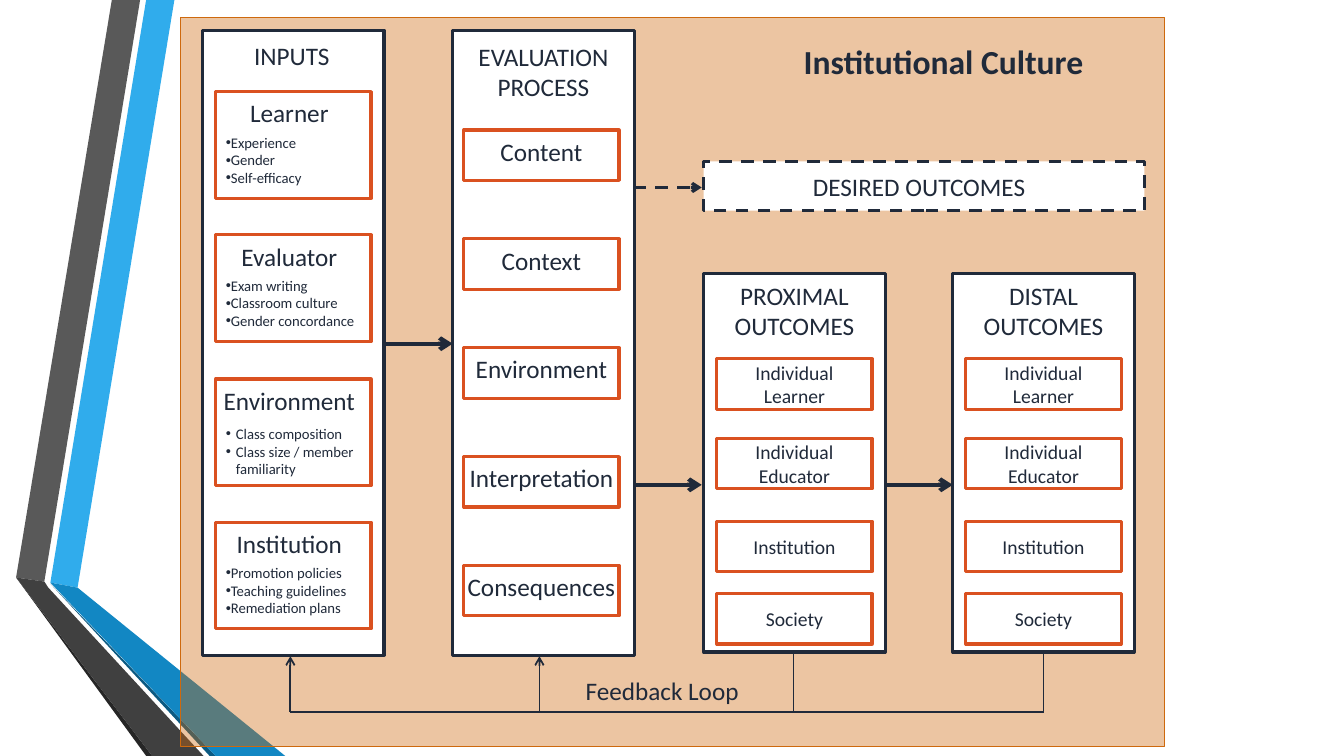
"""Builds the institutional culture slide: inputs, evaluation process and outcomes."""
from lxml import etree
from pptx import Presentation
from pptx.dml.color import RGBColor
from pptx.enum.dml import MSO_LINE
from pptx.enum.shapes import MSO_CONNECTOR, MSO_SHAPE
from pptx.enum.text import MSO_ANCHOR, PP_ALIGN
from pptx.oxml.ns import qn
from pptx.util import Pt

RECTANGLE = MSO_SHAPE.RECTANGLE
STRAIGHT = MSO_CONNECTOR.STRAIGHT
DASH = MSO_LINE.DASH
TOP, MIDDLE = MSO_ANCHOR.TOP, MSO_ANCHOR.MIDDLE
LEFT, CENTER = PP_ALIGN.LEFT, PP_ALIGN.CENTER

PX = 9144
FONT = "Calibri"
TITLE_ONLY = 5
CARD_WIDTH = 154
COLORS = {
    "white": "FFFFFF", "navy": "202A3A", "card": "DA5120", "culture": "CE690D",
    "blue": "30ACEC", "gray": "595959", "black": "262626", "deep": "0C5A82",
    "ocean": "1287C3", "charcoal": "404040",
}
RIBBONS = [
    ("blue", [(50, 578), (77, 583), (173, 0), (145, 0)]),
    ("gray", [(139, 0), (111, 0), (16, 573), (44, 577)]),
    ("black", [(16, 573), (145, 750), (151, 750)]),
    ("deep", [(50, 579), (208, 750), (214, 750)]),
    ("ocean", [(50, 578), (214, 750), (283, 750), (77, 583)]),
    ("charcoal", [(16, 573), (151, 750), (202, 750), (48, 583), (44, 577)]),
]
INPUTS = [
    ("Learner", ["Experience", "Gender", "Self-efficacy"], False),
    ("Evaluator", ["Exam writing", "Classroom culture", "Gender concordance"], False),
    ("Environment", ["Class composition", "Class size / member familiarity"], True),
    ("Institution", ["Promotion policies", "Teaching guidelines", "Remediation plans"], False),
]
PROCESS = ["Content", "Context", "Environment", "Interpretation", "Consequences"]
OUTCOMES = [("Individual Learner", 85), ("Individual Educator", 164),
            ("Institution", 246), ("Society", 318)]
ARROWS = [
    ((381, 341), (449, 341), 3, True, False),
    ((628, 481), (696, 481), 3, True, False),
    ((878, 481), (945, 481), 3, True, False),
    ((628, 186), (696, 186), 2.25, True, True),
]
FEEDBACK = [
    ((1035, 647), (1035, 706), 1.25, False, False),
    ((1035, 706), (288, 706), 1.25, False, False),
    ((288, 706), (288, 651), 1.25, True, False),
    ((535, 706), (535, 651), 1.25, True, False),
    ((787, 647), (787, 706), 1.25, False, False),
]


def rgb(name):
    """Return a palette colour."""
    return RGBColor.from_string(COLORS[name])


def scaled(*lengths):
    """Turn px lengths into EMU."""
    return [length * PX for length in lengths]


def set_frame(shape, margins=(0, 0, 0, 0), anchor=TOP, wrap=True):
    """Set margins, anchor and wrapping, and return the text frame."""
    frame = shape.text_frame
    frame.margin_left, frame.margin_top, frame.margin_right, frame.margin_bottom = scaled(*margins)
    frame.vertical_anchor = anchor
    frame.word_wrap = wrap
    return frame


def write(paragraph, text, size, alignment=CENTER, bold=False):
    """Add one formatted run to a paragraph."""
    paragraph.alignment = alignment
    run = paragraph.add_run()
    run.text = text
    run.font.name, run.font.size, run.font.bold = FONT, Pt(size), bold
    run.font.color.rgb = rgb("navy")


def add_box(slide, box, line="navy", width=2.25, fill="white"):
    """Add a filled and outlined rectangle."""
    shape = slide.shapes.add_shape(RECTANGLE, *scaled(*box))
    shape.shadow.inherit = False
    shape.fill.solid()
    shape.fill.fore_color.rgb = rgb(fill)
    shape.line.color.rgb = rgb(line)
    shape.line.width = Pt(width)
    return shape


def add_column(slide, box, lines, margins):
    """Add a white column with its heading lines at the top."""
    frame = set_frame(add_box(slide, box), margins)
    for index, line in enumerate(lines):
        write(frame.add_paragraph() if index else frame.paragraphs[0], line, 18)


def add_line(slide, start, end, width, arrow, dashed):
    """Add a straight connector, with an arrowhead and dashes where asked."""
    connector = slide.shapes.add_connector(STRAIGHT, *scaled(*start, *end))
    connector.line.color.rgb = rgb("navy")
    connector.line.width = Pt(width)
    if dashed:
        connector.line.dash_style = DASH
    if arrow:
        etree.SubElement(connector.line._get_or_add_ln(), qn("a:tailEnd"), type="arrow")
    etree.SubElement(connector.element.spPr, qn("a:effectLst"))


def add_bullet(frame, text, hanging):
    """Add a bulleted paragraph, hanging where its text can wrap."""
    paragraph = frame.add_paragraph()
    write(paragraph, text, 10.5, LEFT)
    properties = paragraph._p.get_or_add_pPr()
    properties.set("marL", str((20 if hanging else 10) * PX))
    properties.set("indent", str((-10 if hanging else 0) * PX))
    etree.SubElement(properties, qn("a:buFont"), typeface="Arial")
    etree.SubElement(properties, qn("a:buChar"), char="•")
    return paragraph


def add_ribbons(slide):
    """Draw the folded ribbons on the left."""
    for color, points in RIBBONS:
        builder = slide.shapes.build_freeform(*points[0], scale=PX)
        builder.add_line_segments(points[1:], close=True)
        ribbon = builder.convert_to_shape()
        ribbon.shadow.inherit = False
        ribbon.fill.solid()
        ribbon.fill.fore_color.rgb = rgb(color)
        ribbon.line.fill.background()


def add_culture(slide, box):
    """Add the translucent backdrop and put the title in its upper right."""
    left, top, _, _ = box
    backdrop = add_box(slide, box, "culture", 0.75, "culture")
    color = backdrop.element.spPr.find(qn("a:solidFill"))[0]
    etree.SubElement(color, qn("a:alpha"), val="38000")
    title = slide.shapes.title
    title.left, title.top, title.width, title.height = scaled(left + 608, top + 19, 311, 50)
    frame = set_frame(title, (10, 5, 10, 5), wrap=False)
    write(frame.paragraphs[0], "Institutional Culture", 24, LEFT, True)
    backdrop.element.addnext(title.element)


def add_inputs(slide, box):
    """Add the inputs column with its bulleted cards."""
    left, top, _, _ = box
    add_column(slide, box, ["INPUTS"], (0, 10, 3, 0))
    for index, (heading, items, hanging) in enumerate(INPUTS):
        place = (left + 13, top + 61 + round(index * 142.3), CARD_WIDTH, 106)
        frame = set_frame(add_box(slide, place, "card"), (0, 6, 8, 0))
        write(frame.paragraphs[0], heading, 18)
        bullets = [add_bullet(frame, item, hanging) for item in items]
        bullets[0].space_before = Pt(7 if hanging else 4)


def add_process(slide, box):
    """Add the evaluation process column with its evenly spaced cards."""
    left, top, _, _ = box
    add_column(slide, box, ["EVALUATION PROCESS"], (10, 11, 10, 0))
    for index, step in enumerate(PROCESS):
        place = (left + 11, top + 99 + index * 108, CARD_WIDTH, 50)
        frame = set_frame(add_box(slide, place, "card"), (0, 6, 0, 0), wrap=False)
        write(frame.paragraphs[0], step, 18)


def add_outcomes(slide, box, heading):
    """Add one outcomes column with its four cards."""
    left, top, _, _ = box
    add_column(slide, box, [heading, "OUTCOMES"], (10, 7, 10, 0))
    for level, offset in OUTCOMES:
        card = add_box(slide, (left + 13, top + offset, CARD_WIDTH, 50), "card")
        write(set_frame(card, (10, 0, 10, 0), MIDDLE).paragraphs[0], level, 14)


def add_desired(slide, box):
    """Add the dashed desired outcomes box."""
    shape = add_box(slide, box)
    shape.line.dash_style = DASH
    write(set_frame(shape, (0, 0, 10, 0), MIDDLE).paragraphs[0], "DESIRED OUTCOMES", 18)


def add_feedback(slide, box):
    """Add the feedback lines and their label."""
    for line in FEEDBACK:
        add_line(slide, *line)
    label = slide.shapes.add_textbox(*scaled(*box))
    frame = set_frame(label, (10, 5, 10, 5), wrap=False)
    write(frame.paragraphs[0], "Feedback Loop", 18, LEFT)


def main():
    """Build and save the slide."""
    presentation = Presentation()
    presentation.slide_width, presentation.slide_height = scaled(1333, 750)
    slide = presentation.slides.add_slide(presentation.slide_layouts[TITLE_ONLY])
    add_ribbons(slide)
    add_culture(slide, (179, 17, 976, 724))
    add_inputs(slide, (201, 30, 180, 620))
    add_process(slide, (449, 30, 180, 620))
    add_desired(slide, (698, 160, 437, 49))
    add_outcomes(slide, (698, 271, 180, 376), "PROXIMAL")
    add_outcomes(slide, (945, 271, 180, 376), "DISTAL")
    for arrow in ARROWS:
        add_line(slide, *arrow)
    add_feedback(slide, (571, 665, 180, 40))
    presentation.save("out.pptx")


if __name__ == "__main__":
    main()
